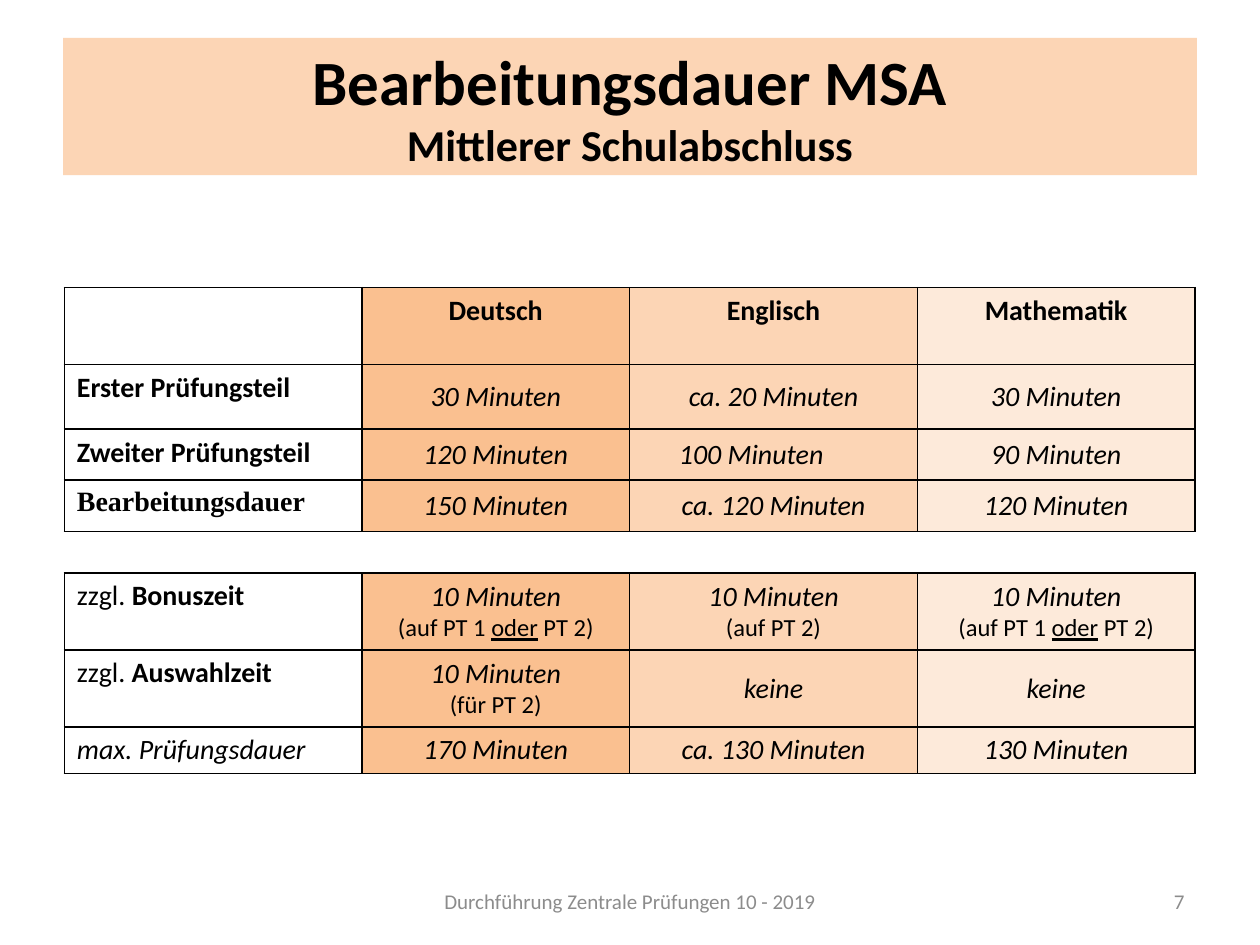
from dataclasses import dataclass

from lxml.etree import SubElement
from pptx import Presentation
from pptx.dml.color import RGBColor
from pptx.enum.text import MSO_ANCHOR, MSO_AUTO_SIZE, PP_ALIGN
from pptx.oxml.ns import qn
from pptx.util import Pt

BLACK = RGBColor(0x00, 0x00, 0x00)
GREY = RGBColor(0x8C, 0x8C, 0x8C)
DEUTSCH = RGBColor(0xFA, 0xC0, 0x90)
ENGLISCH = RGBColor(0xFC, 0xD5, 0xB5)
MATHEMATIK = RGBColor(0xFD, 0xEA, 0xDA)

COLUMN_FILLS = (None, DEUTSCH, ENGLISCH, MATHEMATIK)
COLUMN_WIDTHS = (170, 153, 164.5, 158.5)
TABLE_LEFT = 36.8


@dataclass(frozen=True)
class Run:
    text: str
    size: float = 16
    bold: bool = False
    italic: bool = False
    underline: bool = False
    font: str = "Calibri"


@dataclass(frozen=True)
class Cell:
    paragraphs: tuple = ()
    align: PP_ALIGN = PP_ALIGN.CENTER
    anchor: MSO_ANCHOR = MSO_ANCHOR.MIDDLE
    indent: float = 0


@dataclass(frozen=True)
class Row:
    height: float
    cells: tuple


def label(*runs: Run) -> Cell:
    return Cell((runs,), PP_ALIGN.LEFT, MSO_ANCHOR.TOP)


def bold_label(text: str, font: str = "Calibri") -> Cell:
    return label(Run(text, bold=True, font=font))


def heading(text: str) -> Cell:
    return Cell(((Run(text, bold=True),),), anchor=MSO_ANCHOR.TOP)


def duration(text: str, *note: Run, **layout) -> Cell:
    """Italic time with an optional smaller line of notes below it."""
    first = (Run(text, italic=True),)
    return Cell((first, note) if note else (first,), **layout)


def note(text: str, underline: bool = False) -> Run:
    return Run(text, 14, underline=underline)


EITHER_PART = (note("(auf PT 1 "), note("oder", underline=True), note(" PT 2)"))

EXAM_PARTS = (
    Row(44, (Cell(), heading("Deutsch"), heading("Englisch"), heading("Mathematik"))),
    Row(36.8, (bold_label("Erster Prüfungsteil"), duration("30 Minuten"),
               duration("ca. 20 Minuten"), duration("30 Minuten"))),
    Row(29.2, (bold_label("Zweiter Prüfungsteil"), duration("120 Minuten"),
               duration("100 Minuten", align=PP_ALIGN.LEFT, indent=21),
               duration("90 Minuten"))),
    Row(29.2, (bold_label("Bearbeitungsdauer", "Times New Roman"),
               duration("150 Minuten"), duration("ca. 120 Minuten"),
               duration("120 Minuten"))),
)
EXTRA_TIME = (
    Row(44, (label(Run("zzgl. "), Run("Bonuszeit", bold=True)),
             duration("10 Minuten", *EITHER_PART),
             duration("10 Minuten", note("(auf PT 2)")),
             duration("10 Minuten", *EITHER_PART))),
    Row(44, (label(Run("zzgl."), Run(" Auswahlzeit", bold=True)),
             duration("10 Minuten", note("(für PT 2)")),
             duration("keine"), duration("keine"))),
    Row(26.6, (label(Run("max. Prüfungsdauer", italic=True)),
               duration("170 Minuten"), duration("ca. 130 Minuten"),
               duration("130 Minuten"))),
)


def add_text(p, text: str, *, size: float = 16, bold: bool = False,
             italic: bool = False, underline: bool = False,
             font: str = "Calibri", color: RGBColor = BLACK) -> None:
    r = p.add_run()
    r.text = text
    f = r.font
    f.size, f.name = Pt(size), font
    f.bold, f.italic, f.underline = bold, italic, underline
    f.color.rgb = color


def set_borders(cell, width: float = 1) -> None:
    tc_pr = cell._tc.get_or_add_tcPr()
    for i, side in enumerate(("lnL", "lnR", "lnT", "lnB")):
        ln = tc_pr.makeelement(qn(f"a:{side}"), {"w": str(Pt(width))})
        fill = SubElement(ln, qn("a:solidFill"))
        SubElement(fill, qn("a:srgbClr"), val=str(BLACK))
        tc_pr.insert(i, ln)


def fill_cell(cell, content: Cell, fill: RGBColor | None) -> None:
    if fill is None:
        cell.fill.background()
    else:
        cell.fill.solid()
        cell.fill.fore_color.rgb = fill
    set_borders(cell)
    cell.vertical_anchor = content.anchor
    tf = cell.text_frame
    for i, runs in enumerate(content.paragraphs):
        p = tf.add_paragraph() if i else tf.paragraphs[0]
        p.alignment = content.align
        if content.indent:
            p._p.get_or_add_pPr().set("marL", str(Pt(content.indent)))
        for run in runs:
            add_text(p, run.text, size=run.size, bold=run.bold, italic=run.italic,
                     underline=run.underline, font=run.font)


def add_duration_table(s, top: float, rows: tuple[Row, ...]) -> None:
    height = sum(row.height for row in rows)
    table = s.shapes.add_table(len(rows), len(COLUMN_WIDTHS), Pt(TABLE_LEFT), Pt(top),
                               Pt(sum(COLUMN_WIDTHS)), Pt(height)).table
    table.first_row = table.horz_banding = False
    for column, width in zip(table.columns, COLUMN_WIDTHS):
        column.width = Pt(width)
    for i, row in enumerate(rows):
        table.rows[i].height = Pt(row.height)
        for j, (content, fill) in enumerate(zip(row.cells, COLUMN_FILLS)):
            fill_cell(table.cell(i, j), content, fill)


def add_title(s) -> None:
    sp = s.shapes.title
    sp.left, sp.top, sp.width, sp.height = Pt(36), Pt(21.6), Pt(648), Pt(78.5)
    sp.fill.solid()
    sp.fill.fore_color.rgb = ENGLISCH
    tf = sp.text_frame
    tf.auto_size = MSO_AUTO_SIZE.NONE
    tf.vertical_anchor = MSO_ANCHOR.MIDDLE
    p = tf.paragraphs[0]
    p.alignment = PP_ALIGN.CENTER
    add_text(p, "Bearbeitungsdauer MSA", size=36, bold=True)
    p.add_line_break()
    add_text(p, "Mittlerer Schulabschluss", size=25.2, bold=True)


def add_footer(s, left: float, width: float, text: str, align: PP_ALIGN) -> None:
    tf = s.shapes.add_textbox(Pt(left), Pt(500.5), Pt(width), Pt(28.8)).text_frame
    tf.word_wrap = True
    tf.vertical_anchor = MSO_ANCHOR.MIDDLE
    p = tf.paragraphs[0]
    p.alignment = align
    add_text(p, text, size=12, color=GREY)


def main() -> None:
    prs = Presentation()
    prs.slide_width, prs.slide_height = Pt(720), Pt(540)
    s = prs.slides.add_slide(prs.slide_layouts[5])
    add_title(s)
    add_footer(s, 246, 228, "Durchführung Zentrale Prüfungen 10 - 2019", PP_ALIGN.CENTER)
    add_footer(s, 516, 168, "7", PP_ALIGN.RIGHT)
    add_duration_table(s, 164.4, EXAM_PARTS)
    add_duration_table(s, 327.4, EXTRA_TIME)
    prs.save("out.pptx")


if __name__ == "__main__":
    main()
